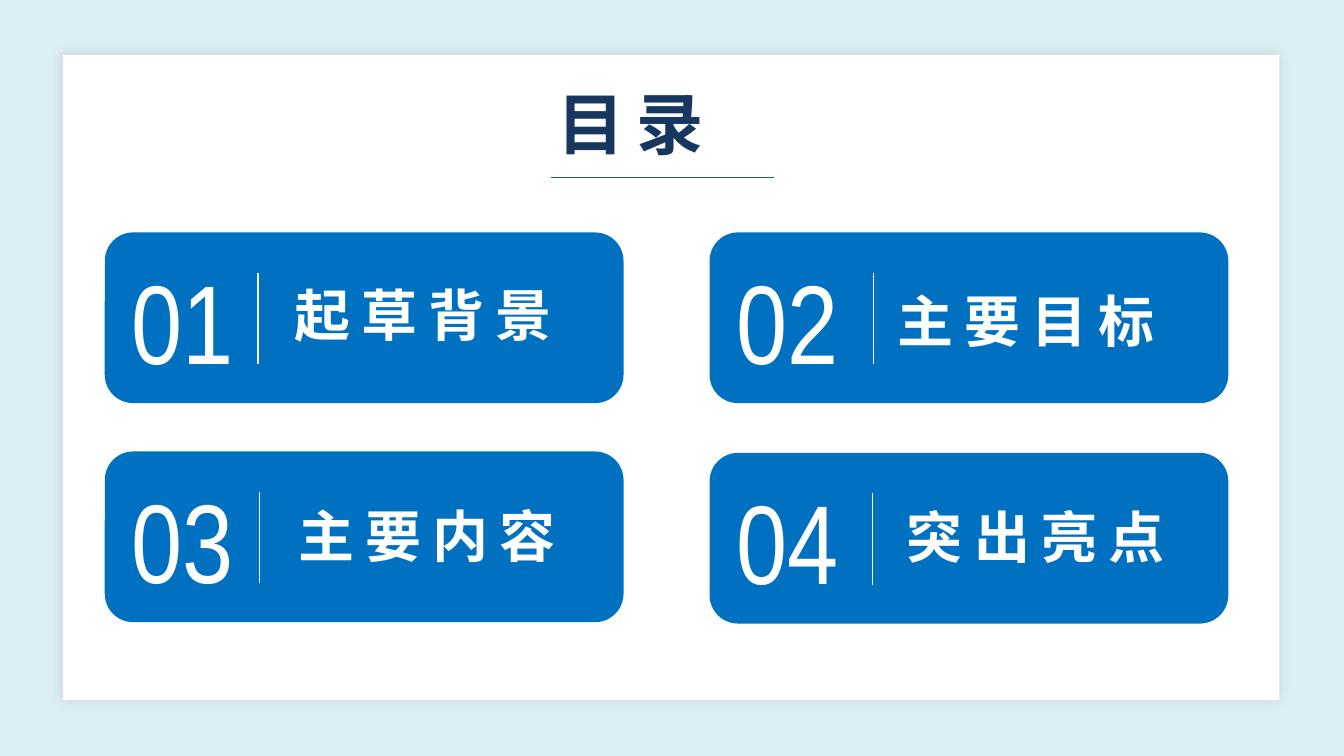
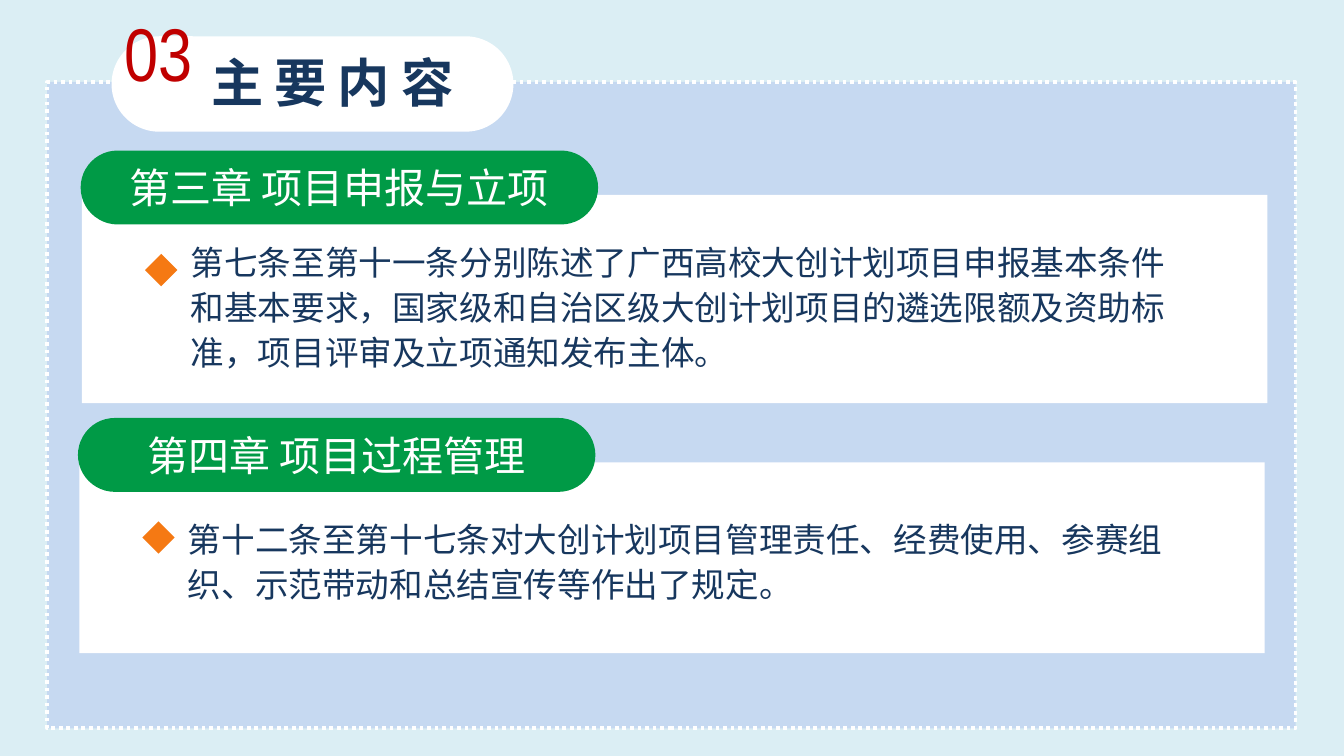
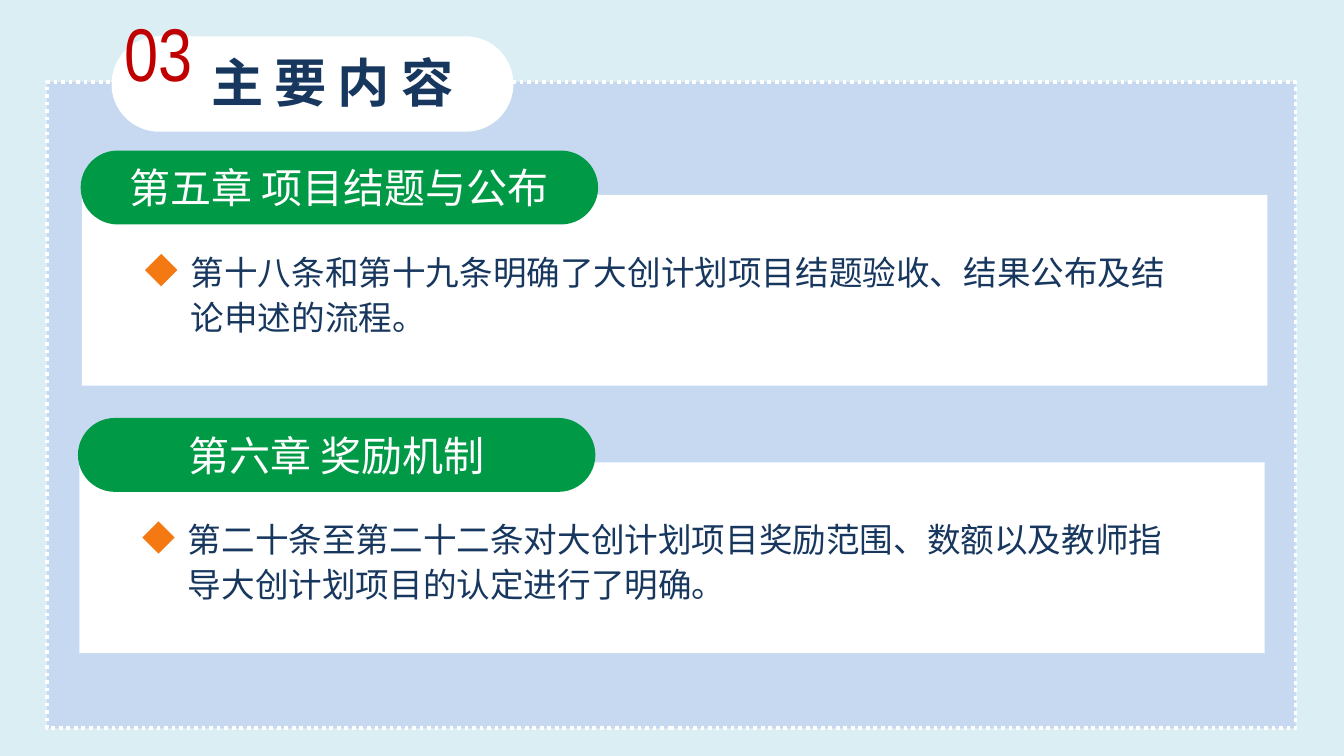
import pptx
import pptx.util
import pptx.dml.color
import pptx.enum.dml
import pptx.enum.shapes
import pptx.enum.text
import pptx.oxml
import pptx.oxml.ns
import lxml.etree

Inches = pptx.util.Inches
Pt = pptx.util.Pt
SHAPE = pptx.enum.shapes.MSO_SHAPE
ALIGN = pptx.enum.text.PP_ALIGN
ANCHOR = pptx.enum.text.MSO_ANCHOR
AUTO_SIZE = pptx.enum.text.MSO_AUTO_SIZE
qn = pptx.oxml.ns.qn

COLORS = {
    "background": "DBEEF4",
    "white": "FFFFFF",
    "navy": "17375E",
    "rule": "2F5B50",
    "card": "0070C0",
    "panel": "C6D9F1",
    "chapter": "009A46",
    "bullet": "F57913",
    "number": "C00000",
    "shadow": "000000",
}
RGB = {name: pptx.dml.color.RGBColor.from_string(value) for name, value in COLORS.items()}
CHINESE = "Noto Sans CJK SC"
NARROW = "Arial Narrow"


def draw_shape(shapes, kind, left, top, width, height, color):
    shape = shapes.add_shape(kind, Inches(left), Inches(top), Inches(width), Inches(height))
    shape.shadow.inherit = False
    shape.fill.solid()
    shape.fill.fore_color.rgb = RGB[color]
    shape.line.fill.background()
    return shape


def write_text(shape, text, size, color, font=CHINESE, bold=False, spacing=0, align=ALIGN.LEFT,
               anchor=ANCHOR.TOP, wrap=True, grow=True, line_spacing=None):
    frame = shape.text_frame
    frame.word_wrap = wrap
    frame.auto_size = AUTO_SIZE.SHAPE_TO_FIT_TEXT if grow else AUTO_SIZE.NONE
    frame.vertical_anchor = anchor
    paragraph = frame.paragraphs[0]
    paragraph.alignment = align
    if line_spacing:
        paragraph.line_spacing = Pt(line_spacing)
    run = paragraph.add_run()
    run.text = text
    run.font.size = Pt(size)
    run.font.bold = bold
    run.font.color.rgb = RGB[color]
    run.font.name = font
    properties = run.font._element
    lxml.etree.SubElement(properties, qn("a:ea")).set("typeface", font)
    if spacing:
        properties.set("spc", str(spacing * 100))
    return run


# Widescreen page, 16 to 9
presentation = pptx.Presentation()
presentation.slide_width = Inches(10)
presentation.slide_height = presentation.slide_width * 9 // 16
title_only = presentation.slide_layouts[5]

# Background shared by all slides
background = presentation.slide_master.background.fill
background.solid()
background.fore_color.rgb = RGB["background"]

# Contents slide: white sheet with a soft shadow
slide = presentation.slides.add_slide(title_only)
sheet = draw_shape(slide.shapes, SHAPE.RECTANGLE, 0.47, 0.41, 9.05, 4.8, "white")
effects = sheet.element.spPr.find(qn("a:effectLst"))
shadow = lxml.etree.SubElement(effects, qn("a:outerShdw"), blurRad=str(Pt(6)), dist="0", dir="0")
shadow_color = lxml.etree.SubElement(shadow, qn("a:srgbClr"), val=COLORS["shadow"])
lxml.etree.SubElement(shadow_color, qn("a:alpha"), val="10000")

# Contents slide: title, moved in front of the sheet
title = slide.shapes.title
title.left, title.top, title.width, title.height = map(Inches, (4.05, 0.56, 1.76, 0.71))
write_text(title, "目录", 36, "navy", bold=True, spacing=6, align=ALIGN.JUSTIFY)
slide.shapes.element.append(title.element)
rules = [(slide.shapes, 4.1, 1.32, 5.76, 1.32, "rule")]

# Contents slide: cards as (number, label, left, top, number width, divider x, label box)
cards = [
    ("01", "起草背景", 0.78, 1.73, 0.97, 1.92, (2.09, 2.04, 2.45)),
    ("03", "主要内容", 0.78, 3.36, 1.1, 1.93, (2.12, 3.68, 2.28)),
    ("02", "主要目标", 5.28, 1.73, 1.07, 6.5, (6.58, 2.08, 2.43)),
    ("04", "突出亮点", 5.28, 3.37, 1.07, 6.49, (6.65, 3.69, 2.45)),
]
for number, label, left, top, number_width, divider, label_box in cards:
    card = slide.shapes.add_group_shape().shapes
    draw_shape(card, SHAPE.ROUNDED_RECTANGLE, left, top, 3.86, 1.27, "card")
    number_shape = draw_shape(card, SHAPE.RECTANGLE, left + 0.1, top + 0.1, number_width, 1.11, "card")
    write_text(number_shape, number, 60, "white", font=NARROW, wrap=False)
    label_shape = draw_shape(card, SHAPE.RECTANGLE, *label_box, 0.6, "card")
    write_text(label_shape, label, 30, "white", bold=True, spacing=6)
    rules.append((card, divider, top + 0.3, divider, top + 0.98, "white"))

# Contents slide: title rule and card dividers
for shapes, start_x, start_y, end_x, end_y, color in rules:
    rule = shapes.add_connector(pptx.enum.shapes.MSO_CONNECTOR.STRAIGHT, Inches(start_x),
                                Inches(start_y), Inches(end_x), Inches(end_y))
    rule.line.color.rgb = RGB[color]
    rule.line.width = Pt(0.75)
    lxml.etree.SubElement(rule.element.spPr, qn("a:effectLst"))

# Chapter slides: each chapter is (heading, body, box height, body offset, body height)
chapter_slides = [
    [
        ("第三章 项目申报与立项",
         "第七条至第十一条分别陈述了广西高校大创计划项目申报基本条件和基本要求，"
         "国家级和自治区级大创计划项目的遴选限额及资助标准，项目评审及立项通知发布主体。",
         1.55, 0.6, 1.11),
        ("第四章 项目过程管理",
         "第十二条至第十七条对大创计划项目管理责任、经费使用、参赛组织、示范带动和总结宣传等作出了规定。",
         1.42, 0.67, 0.77),
    ],
    [
        ("第五章 项目结题与公布",
         "第十八条和第十九条明确了大创计划项目结题验收、结果公布及结论申述的流程。",
         1.42, 0.67, 0.77),
        ("第六章 奖励机制",
         "第二十条至第二十二条对大创计划项目奖励范围、数额以及教师指导大创计划项目的认定进行了明确。",
         1.42, 0.67, 0.77),
    ],
]
for chapters in chapter_slides:
    slide = presentation.slides.add_slide(title_only)

    # Dotted panel and title tab
    panel = draw_shape(slide.shapes, SHAPE.RECTANGLE, 0.35, 0.61, 9.29, 4.81, "panel")
    panel.line.color.rgb = RGB["white"]
    panel.line.width = Pt(2)
    panel.line.dash_style = pptx.enum.dml.MSO_LINE.ROUND_DOT
    tab = draw_shape(slide.shapes, SHAPE.ROUNDED_RECTANGLE, 0.83, 0.27, 2.99, 0.71, "white")
    tab.adjustments[0] = 0.5

    # Section number with a white outline
    number_box = slide.shapes.add_textbox(Inches(0.83), 0, Inches(0.79), Inches(0.77))
    run = write_text(number_box, "03", 40, "number", font=NARROW, wrap=False)
    outline = pptx.oxml.parse_xml(
        f'<a:ln {pptx.oxml.ns.nsdecls("a")} w="{Pt(2.25)}"><a:solidFill>'
        f'<a:srgbClr val="{COLORS["white"]}"/></a:solidFill></a:ln>')
    run.font._element.insert(0, outline)

    # Title
    title = slide.shapes.title
    title.left, title.top, title.width, title.height = map(Inches, (1.47, 0.32, 2.17, 0.57))
    write_text(title, "主要内容", 28, "navy", bold=True, spacing=6)
    slide.shapes.element.append(title.element)

    # Two chapters, one below the other
    for index, (heading, body, box_height, body_offset, body_height) in enumerate(chapters):
        left = 0.6 - 0.02 * index
        top = 1.12 + 1.99 * index
        draw_shape(slide.shapes, SHAPE.RECTANGLE, left + 0.01, top + 0.33, 8.82, box_height, "white")
        pill = draw_shape(slide.shapes, SHAPE.ROUNDED_RECTANGLE, left, top, 3.85, 0.55, "chapter")
        pill.adjustments[0] = 0.5
        write_text(pill, heading, 22, "white", align=ALIGN.CENTER, anchor=ANCHOR.MIDDLE, grow=False)
        body_box = slide.shapes.add_textbox(Inches(left + 0.72), Inches(top + body_offset),
                                            Inches(7.48), Inches(body_height))
        write_text(body_box, body, 18, "navy", line_spacing=24)
        draw_shape(slide.shapes, SHAPE.DIAMOND, left + 0.48, top + 0.77, 0.24, 0.24, "bullet")

presentation.save("out.pptx")
